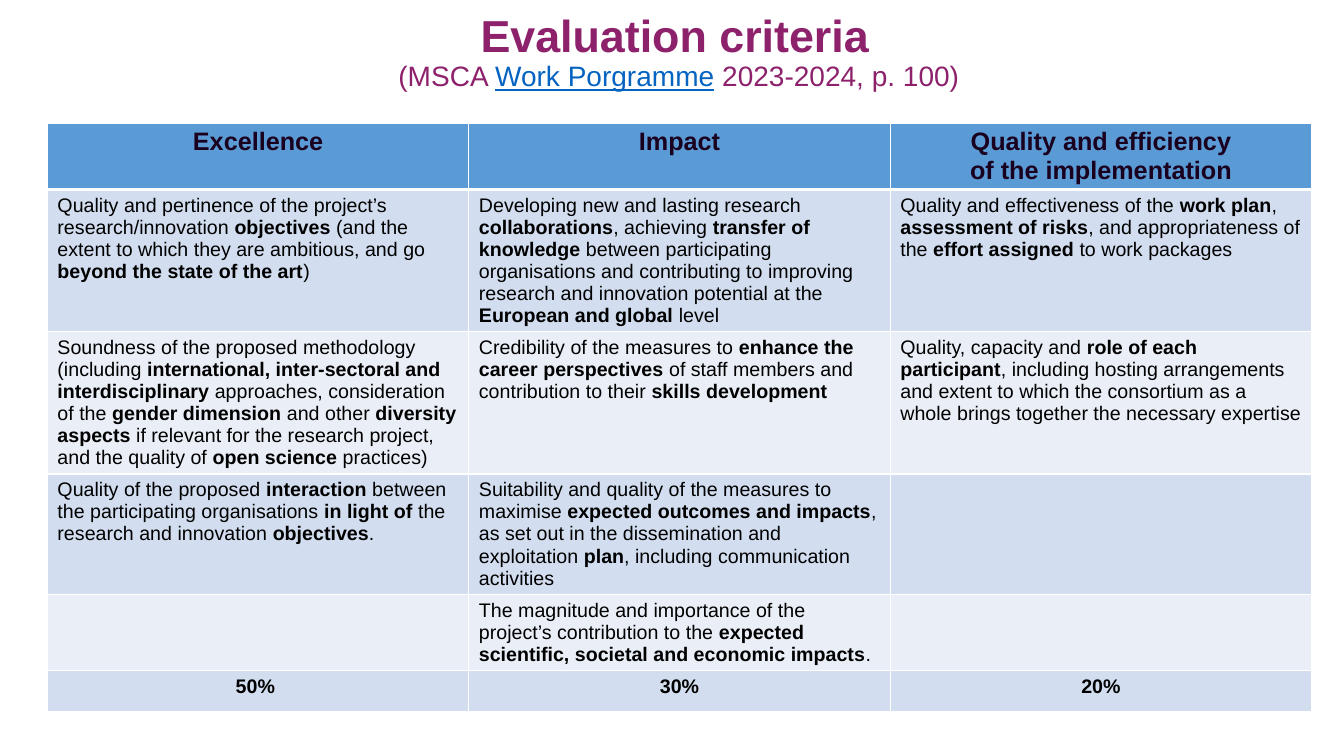
from copy import deepcopy
from dataclasses import dataclass

from lxml import etree
from pptx import Presentation
from pptx.dml.color import RGBColor
from pptx.enum.text import MSO_ANCHOR, MSO_AUTO_SIZE, PP_ALIGN
from pptx.oxml.ns import qn
from pptx.util import Emu, Pt

CENTER, LEFT = PP_ALIGN.CENTER, PP_ALIGN.LEFT
MIDDLE = MSO_ANCHOR.MIDDLE
NO_AUTOFIT = MSO_AUTO_SIZE.NONE
EMU_PER_PX = 9144
TITLE_ONLY = 5


@dataclass(frozen=True)
class Theme:
    font: str = "Arial"
    title: str = "8D216B"
    link: str = "0563C1"
    header_text: str = "19001E"
    body_text: str = "000000"
    header_fill: str = "5B9BD5"
    bands: tuple[str, str] = ("D2DEEF", "EAEFF7")
    border: str = "FFFFFF"
    title_size: int = 32
    subtitle_size: int = 20
    header_size: int = 18
    body_size: int = 14
    thin: int = 1
    thick: int = 3


@dataclass(frozen=True)
class Criterion:
    """One table column; ** marks the bold stretches of its entries."""
    heading: str
    entries: tuple[str, str, str, str]
    weight: str


THEME = Theme()
CRITERIA = (
    Criterion("Excellence", (
        "Quality and pertinence of the project’s research/innovation **objectives** (and the "
        "extent to which they are ambitious, and go **beyond the state of the art**)",
        "Soundness of the proposed methodology (including **international, inter-sectoral and "
        "interdisciplinary** approaches, consideration of the **gender dimension **and other "
        "**diversity aspects **if relevant for the research project, and the quality of "
        "**open science **practices)",
        "Quality of the proposed **interaction** between the participating organisations "
        "**in light of **the research and innovation **objectives**.",
        "",
    ), "50% "),
    Criterion("Impact", (
        "Developing new and lasting research **collaborations**, achieving **transfer of "
        "knowledge** between participating organisations and contributing to improving "
        "research and innovation potential at the **European and global **level",
        "Credibility of the measures to** enhance the career perspectives **of staff members "
        "and contribution to their **skills development**",
        "Suitability and quality of the measures to maximise **expected outcomes and "
        "impacts**, as set out in the dissemination and exploitation **plan**, including "
        "communication activities",
        "The magnitude and importance of the project’s contribution to the **expected "
        "scientific, societal and economic impacts**.",
    ), "30%"),
    Criterion("Quality and efficiency\nof the implementation", (
        "Quality and effectiveness of the **work plan**, **assessment of risks**, and "
        "appropriateness of the **effort assigned **to work packages",
        "Quality, capacity and **role of each participant**, including hosting arrangements "
        "and extent to which the consortium as a whole brings together the necessary expertise",
        "",
        "",
    ), "20%"),
)


def px(length: int) -> Emu:
    return Emu(length * EMU_PER_PX)


def write(para, text: str, *, size: int, color: str, bold: bool = False,
          underline: bool = False):
    """Append one formatted span to a paragraph and return it."""
    span = para.add_run()
    span.text = text
    span.font.name = THEME.font
    span.font.size = Pt(size)
    span.font.bold = bold
    span.font.underline = underline
    span.font.color.rgb = RGBColor.from_string(color)
    return span


def add_title(page) -> None:
    title = page.shapes.title
    title.left, title.top, title.width, title.height = px(0), px(0), px(1333), px(106)
    frame = title.text_frame
    frame.word_wrap = True
    frame.auto_size = NO_AUTOFIT
    frame.vertical_anchor = MIDDLE
    para = frame.paragraphs[0]
    para.alignment = CENTER
    para.line_spacing = 0.9
    para._p.get_or_add_pPr().set("marL", str(px(6)))
    heading = write(para, "Evaluation criteria", size=THEME.title_size, color=THEME.title,
                    bold=True)
    para.add_line_break()
    para._p[-1].append(deepcopy(heading._r.rPr))
    write(para, " (MSCA ", size=THEME.subtitle_size, color=THEME.title)
    write(para, "Work Porgramme", size=THEME.subtitle_size, color=THEME.link, underline=True)
    write(para, " 2023-2024, p. 100)", size=THEME.subtitle_size, color=THEME.title)


def set_borders(cell, *, top: int, bottom: int) -> None:
    properties = cell._tc.get_or_add_tcPr()
    widths = {"lnL": THEME.thin, "lnR": THEME.thin, "lnT": top, "lnB": bottom}
    for side, width in widths.items():
        line = etree.SubElement(properties, qn(f"a:{side}"), w=str(Pt(width)))
        fill = etree.SubElement(line, qn("a:solidFill"))
        etree.SubElement(fill, qn("a:srgbClr"), val=THEME.border)


def fill_cell(cell, text: str, *, fill: str, size: int, color: str,
              align: PP_ALIGN = LEFT, bold: bool = False, top: int = THEME.thin,
              bottom: int = THEME.thin) -> None:
    set_borders(cell, top=top, bottom=bottom)
    cell.fill.solid()
    cell.fill.fore_color.rgb = RGBColor.from_string(fill)
    frame = cell.text_frame
    for number, line in enumerate(text.split("\n")):
        para = frame.add_paragraph() if number else frame.paragraphs[0]
        para.alignment = align
        for index, part in enumerate(line.split("**")):
            if part:
                write(para, part, size=size, color=color, bold=bold or index % 2 == 1)


def add_criteria_table(page) -> None:
    row_count = len(CRITERIA[0].entries) + 2
    frame = page.shapes.add_table(row_count, len(CRITERIA), px(47), px(122),
                                  px(418 * len(CRITERIA)), px(41 * row_count))
    table = frame.table
    for column, criterion in enumerate(CRITERIA):
        fill_cell(table.cell(0, column), criterion.heading, fill=THEME.header_fill,
                  size=THEME.header_size, color=THEME.header_text, align=CENTER, bold=True,
                  bottom=THEME.thick)
        for row, text in enumerate((*criterion.entries, criterion.weight), start=1):
            is_weight = row == row_count - 1
            fill_cell(table.cell(row, column), text, fill=THEME.bands[(row - 1) % 2],
                      size=THEME.body_size, color=THEME.body_text,
                      align=CENTER if is_weight else LEFT, bold=is_weight,
                      top=THEME.thick if row == 1 else THEME.thin)
    frame.height = px(617)


def main() -> None:
    deck = Presentation()
    deck.slide_width, deck.slide_height = px(1333), px(750)
    page = deck.slides.add_slide(deck.slide_layouts[TITLE_ONLY])
    add_title(page)
    add_criteria_table(page)
    deck.save("out.pptx")


if __name__ == "__main__":
    main()
